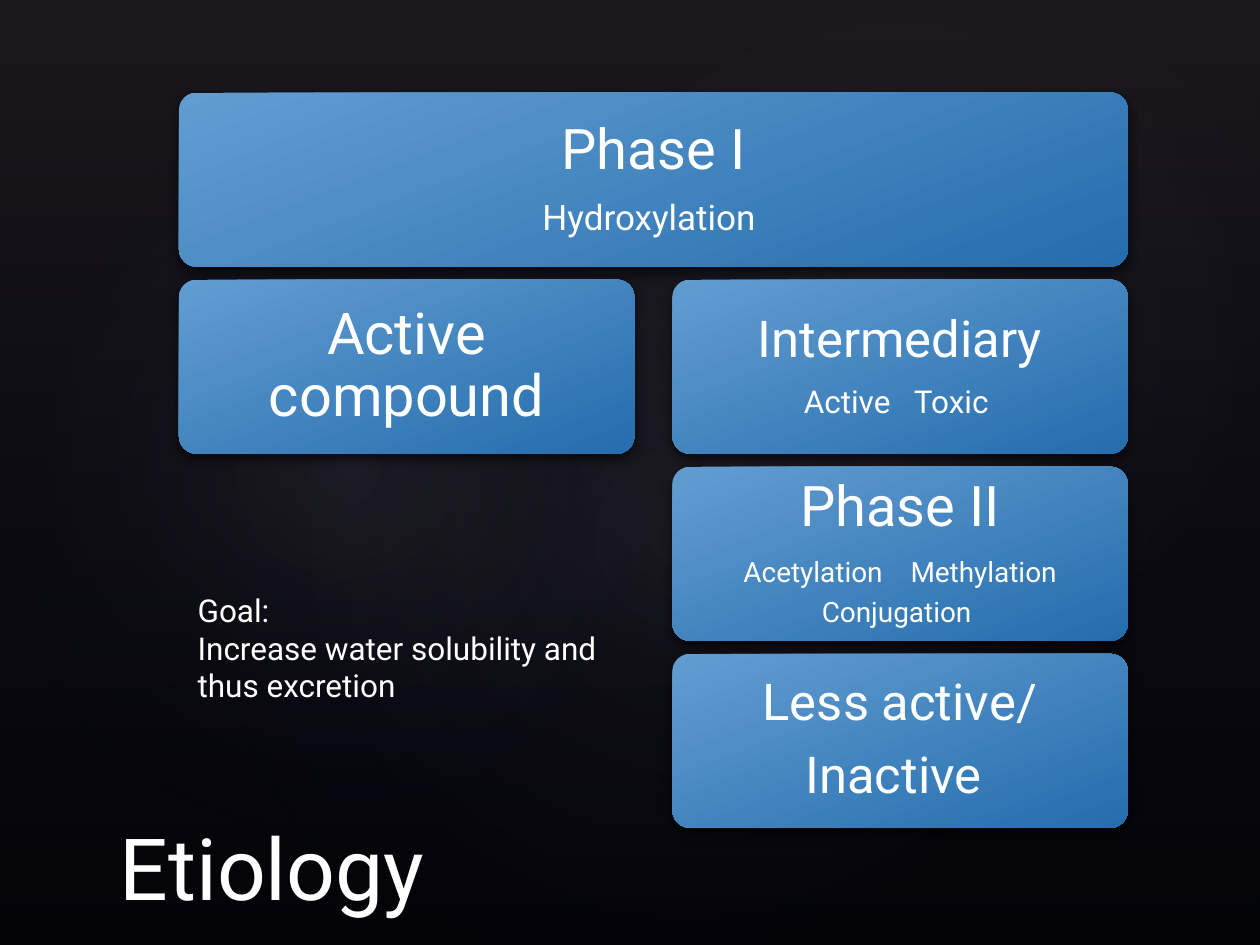
from dataclasses import dataclass

from pptx import Presentation
from pptx.dml.color import RGBColor
from pptx.enum.shapes import MSO_AUTO_SHAPE_TYPE as ShapeKind
from pptx.enum.text import MSO_ANCHOR as Anchor, PP_ALIGN as Align
from pptx.oxml import parse_xml
from pptx.oxml.ns import nsdecls
from pptx.shapes.autoshape import Shape
from pptx.slide import Slide
from pptx.text.text import TextFrame
from pptx.util import Pt

COLORS = {
    "backdrop": "000000",
    "veil_top": "504652",
    "veil_bottom": "242852",
    "glow": "C4BCC6",
    "card_light": "629DD1",
    "card_dark": "256DAD",
    "shadow": "000000",
    "text": "FFFFFF",
}
FONT = "Roboto"
PAGE_WIDTH, PAGE_HEIGHT = 720, 540
CARD_LEFT, CARD_TOP = 102.25, 52.9
CARD_WIDTH, CARD_HEIGHT = 260.25, 99.5
COLUMN_STEP, ROW_STEP = 282, 106.9


@dataclass
class Stop:
    position: int
    color: str
    alpha: int = 100


@dataclass
class Glow:
    left: float
    top: float
    width: float
    height: float
    rotation: float
    alpha: int


@dataclass
class Line:
    text: str
    size: float
    gap: float = 0


@dataclass
class Card:
    row: int
    column: int
    columns: int
    inset: float
    lines: list[Line]


GLOWS = [
    Glow(108, 82, 570.25, 449.25, 328.7, 7),
    Glow(-21.6, 92.2, 436.3, 352.8, 294.3, 8),
    Glow(257.75, 9.4, 510.5, 374.4, 328.7, 8),
]
CARDS = [
    Card(0, 0, 2, 9.6, [Line("Phase I", 32), Line("Hydroxylation ", 20)]),
    Card(1, 0, 1, 9.9, [Line("Active compound", 33)]),
    Card(1, 1, 1, 8.7, [Line("Intermediary", 29), Line("Active Toxic ", 18, 8.9)]),
    Card(2, 1, 1, 9.6, [
        Line("Phase II", 32),
        Line("Acetylation Methylation", 16, 11.9),
        Line("Conjugation ", 16),
    ]),
    Card(3, 1, 1, 8.7, [Line("Less active/", 29), Line("Inactive ", 29)]),
]


def fill_gradient(shape: Shape, stops: list[Stop], angle: float | None = None) -> None:
    marks = "".join(
        f'<a:gs pos="{stop.position * 1000}"><a:srgbClr val="{COLORS[stop.color]}">'
        f'<a:alpha val="{stop.alpha * 1000}"/></a:srgbClr></a:gs>'
        for stop in stops
    )
    if angle is None:
        direction = ('<a:path path="circle"><a:fillToRect l="50000" t="50000" '
                     'r="50000" b="50000"/></a:path>')
    else:
        direction = f'<a:lin ang="{angle * 60000:.0f}" scaled="0"/>'
    gradient = parse_xml(
        f'<a:gradFill {nsdecls("a")} rotWithShape="1"><a:gsLst>{marks}</a:gsLst>'
        f'{direction}</a:gradFill>'
    )
    shape.element.spPr.prstGeom.addnext(gradient)


def add_plain_shape(page: Slide, kind: ShapeKind, left: float, top: float,
                    width: float, height: float) -> Shape:
    shape = page.shapes.add_shape(kind, Pt(left), Pt(top), Pt(width), Pt(height))
    shape.shadow.inherit = False
    shape.line.fill.background()
    return shape


def add_shadow(shape: Shape) -> None:
    effects = shape.element.spPr.find(
        "{http://schemas.openxmlformats.org/drawingml/2006/main}effectLst")
    effects.append(parse_xml(
        f'<a:outerShdw {nsdecls("a")} blurRad="{Pt(6)}" dist="{Pt(3)}" dir="5400000" '
        f'rotWithShape="0"><a:srgbClr val="{COLORS["shadow"]}"><a:alpha val="60000"/>'
        '</a:srgbClr></a:outerShdw>'
    ))


def write_line(frame: TextFrame, text: str, *, size: float, first: bool = False,
               align: Align = Align.LEFT, line_spacing: float = 1,
               space_after: float = 0, gap: float = 0) -> None:
    para = frame.paragraphs[0] if first else frame.add_paragraph()
    para.alignment = align
    para.line_spacing = line_spacing
    para.space_after = Pt(space_after)
    for part in text.partition(" ") if gap else (text,):
        span = para.add_run()
        span.text = part
        span.font.name = FONT
        span.font.size = Pt(size)
        span.font.color.rgb = RGBColor.from_string(COLORS["text"])
        if part == " ":
            span.font._element.set("spc", f"{gap * 100:.0f}")


def draw_backdrop(page: Slide) -> None:
    page.background.fill.solid()
    page.background.fill.fore_color.rgb = RGBColor.from_string(COLORS["backdrop"])
    veil = add_plain_shape(page, ShapeKind.RECTANGLE, 0, 0, PAGE_WIDTH, PAGE_HEIGHT)
    fill_gradient(veil, [Stop(0, "veil_top", 36), Stop(100, "veil_bottom", 10)], 90)
    for glow in GLOWS:
        ellipse = add_plain_shape(page, ShapeKind.OVAL, glow.left, glow.top,
                                  glow.width, glow.height)
        ellipse.rotation = glow.rotation
        fill_gradient(ellipse, [Stop(0, "glow", glow.alpha), Stop(58, "veil_bottom", 0)])


def draw_card(page: Slide, card: Card) -> None:
    box = add_plain_shape(
        page, ShapeKind.ROUNDED_RECTANGLE,
        CARD_LEFT + card.column * COLUMN_STEP, CARD_TOP + card.row * ROW_STEP,
        CARD_WIDTH + (card.columns - 1) * COLUMN_STEP, CARD_HEIGHT,
    )
    box.adjustments[0] = 0.1
    fill_gradient(box, [Stop(0, "card_light"), Stop(100, "card_dark")], 69)
    add_shadow(box)
    frame = box.text_frame
    frame.word_wrap = True
    frame.vertical_anchor = Anchor.MIDDLE
    frame.margin_left = frame.margin_right = Pt(card.inset)
    frame.margin_top = frame.margin_bottom = Pt(card.inset)
    for index, line in enumerate(card.lines):
        write_line(frame, line.text, size=line.size, first=index == 0,
                   align=Align.CENTER, line_spacing=0.9,
                   space_after=0.35 * line.size, gap=line.gap)


def draw_text(page: Slide, lines: list[Line], left: float, top: float, width: float,
              height: float, anchor: Anchor) -> None:
    box = page.shapes.add_textbox(Pt(left), Pt(top), Pt(width), Pt(height))
    frame = box.text_frame
    frame.word_wrap = True
    frame.vertical_anchor = anchor
    for index, line in enumerate(lines):
        write_line(frame, line.text, size=line.size, first=index == 0)


def main() -> None:
    deck = Presentation()
    deck.slide_width, deck.slide_height = Pt(PAGE_WIDTH), Pt(PAGE_HEIGHT)
    page = deck.slides.add_slide(deck.slide_layouts[6])
    draw_backdrop(page)
    for card in CARDS:
        draw_card(page, card)
    draw_text(page, [Line("Etiology", 49)], 61.2, 455.75, 594, 72, Anchor.BOTTOM)
    goal = [Line("Goal:", 18), Line("Increase water solubility and thus excretion", 18)]
    draw_text(page, goal, 105.85, 334, 256.3, 72.7, Anchor.TOP)
    deck.save("out.pptx")


if __name__ == "__main__":
    main()
